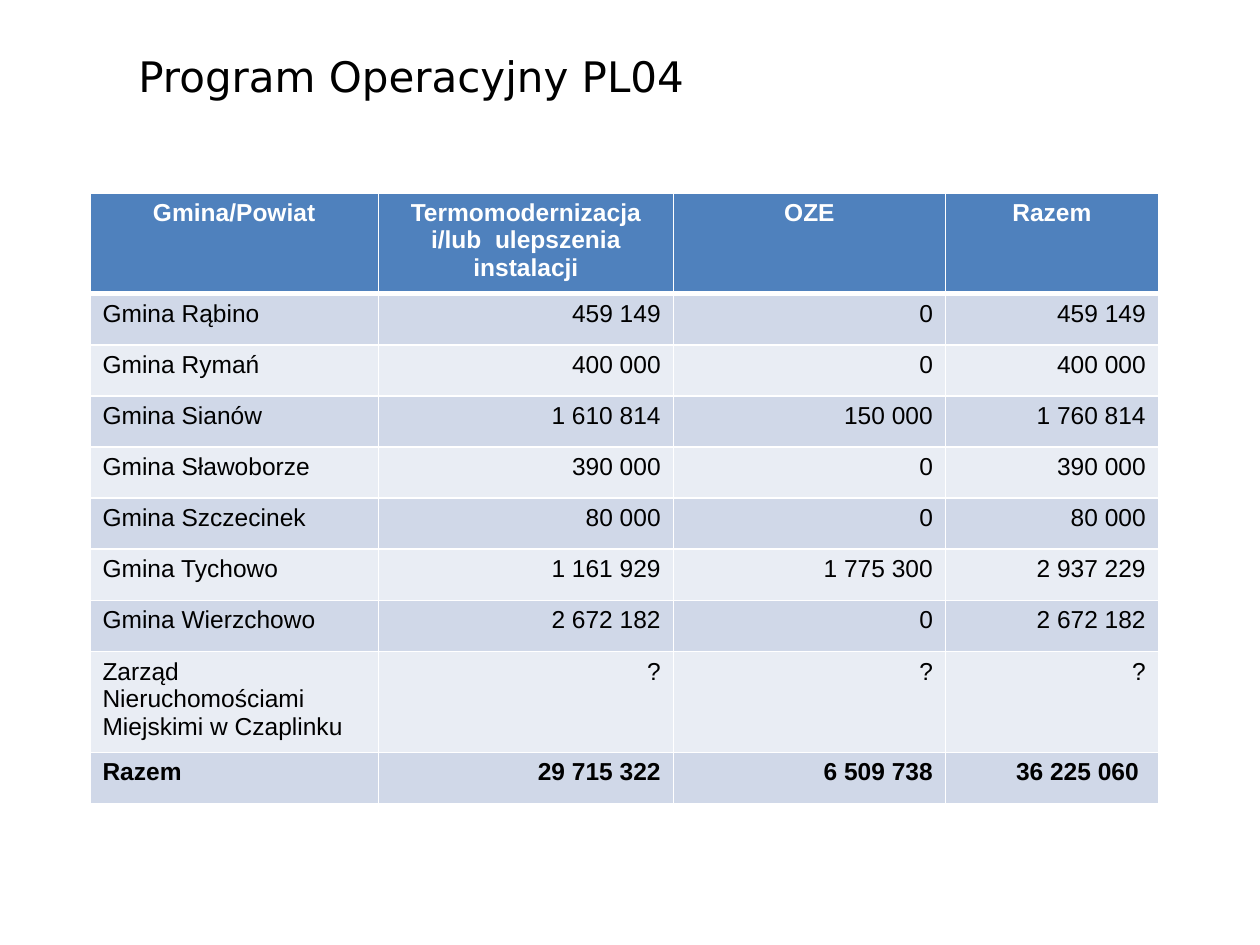
"""Build the slide with the PL04 funding table by municipality."""
import pptx
import pptx.util
import pptx.dml.color
import pptx.enum.text
import pptx.oxml
import pptx.oxml.ns

Pt = pptx.util.Pt
RGB = pptx.dml.color.RGBColor
ALIGN = pptx.enum.text.PP_ALIGN

TITLE = "Program Operacyjny PL04"
ROWS = [
    ("Gmina/Powiat", "Termomodernizacja i/lub  ulepszenia instalacji", "OZE", "Razem"),
    ("Gmina Rąbino", "459 149", "0", "459 149"),
    ("Gmina Rymań", "400 000", "0", "400 000"),
    ("Gmina Sianów", "1 610 814", "150 000", "1 760 814"),
    ("Gmina Sławoborze", "390 000", "0", "390 000"),
    ("Gmina Szczecinek", "80 000", "0", "80 000"),
    ("Gmina Tychowo", "1 161 929", "1 775 300", "2 937 229"),
    ("Gmina Wierzchowo", "2 672 182", "0", "2 672 182"),
    ("Zarząd Nieruchomościami Miejskimi w Czaplinku", "?", "?", "?"),
    ("Razem", "29 715 322", "6 509 738", "36 225 060 "),
]
WIDTHS = [164.9, 168.5, 155.5, 121.7]
LAST = len(ROWS) - 1
TALL = (0, LAST - 1)
HEIGHTS = [57.2 if r in TALL else 29.2 for r in range(len(ROWS))]

BLACK = RGB(0x00, 0x00, 0x00)
WHITE = RGB(0xFF, 0xFF, 0xFF)
BLUE = RGB(0x4F, 0x81, 0xBD)
DARK = RGB(0xD0, 0xD8, 0xE8)
LIGHT = RGB(0xE9, 0xED, 0xF4)


def style(para, face, size, color, bold=False):
    font = para.runs[0].font
    font.name, font.size, font.bold = face, Pt(size), bold
    font.color.rgb = color


def border(cell, row):
    props = cell._tc.get_or_add_tcPr()
    thick = {0: "B", 1: "T"}.get(row)
    for side in "LRTB":
        width = Pt(3 if side == thick else 1)
        props.append(pptx.oxml.parse_xml(
            f'<a:ln{side} {pptx.oxml.ns.nsdecls("a")} w="{width}"><a:solidFill>'
            f'<a:srgbClr val="{WHITE}"/></a:solidFill></a:ln{side}>'))


def add_title(slide):
    box = slide.shapes.add_textbox(Pt(72), Pt(25.2), Pt(409), Pt(36))
    frame = box.text_frame
    frame.word_wrap = True
    frame.auto_size = pptx.enum.text.MSO_AUTO_SIZE.SHAPE_TO_FIT_TEXT
    frame.text = TITLE
    para = frame.paragraphs[0]
    props = para._p.get_or_add_pPr()
    props.set("marL", str(Pt(27)))
    props.set("indent", str(-Pt(27)))
    style(para, "DejaVu Sans", 24, BLACK)


def add_grid(slide):
    table = slide.shapes.add_table(
        len(ROWS), len(WIDTHS), Pt(51.4), Pt(110.2),
        Pt(sum(WIDTHS)), Pt(sum(HEIGHTS))).table
    for col, width in zip(table.columns, WIDTHS):
        col.width = Pt(width)
    for r, texts in enumerate(ROWS):
        table.rows[r].height = Pt(HEIGHTS[r])
        head = r == 0
        for c, text in enumerate(texts):
            cell = table.cell(r, c)
            border(cell, r)
            cell.fill.solid()
            cell.fill.fore_color.rgb = BLUE if head else DARK if r % 2 else LIGHT
            cell.text_frame.text = text
            para = cell.text_frame.paragraphs[0]
            para.alignment = ALIGN.CENTER if head else ALIGN.RIGHT if c else ALIGN.LEFT
            style(para, "Arial", 14, WHITE if head else BLACK, r in (0, LAST))


def main():
    deck = pptx.Presentation()
    deck.slide_width, deck.slide_height = Pt(720), Pt(540)
    slide = deck.slides.add_slide(deck.slide_layouts[6])
    add_title(slide)
    add_grid(slide)
    deck.save("out.pptx")


if __name__ == "__main__":
    main()
